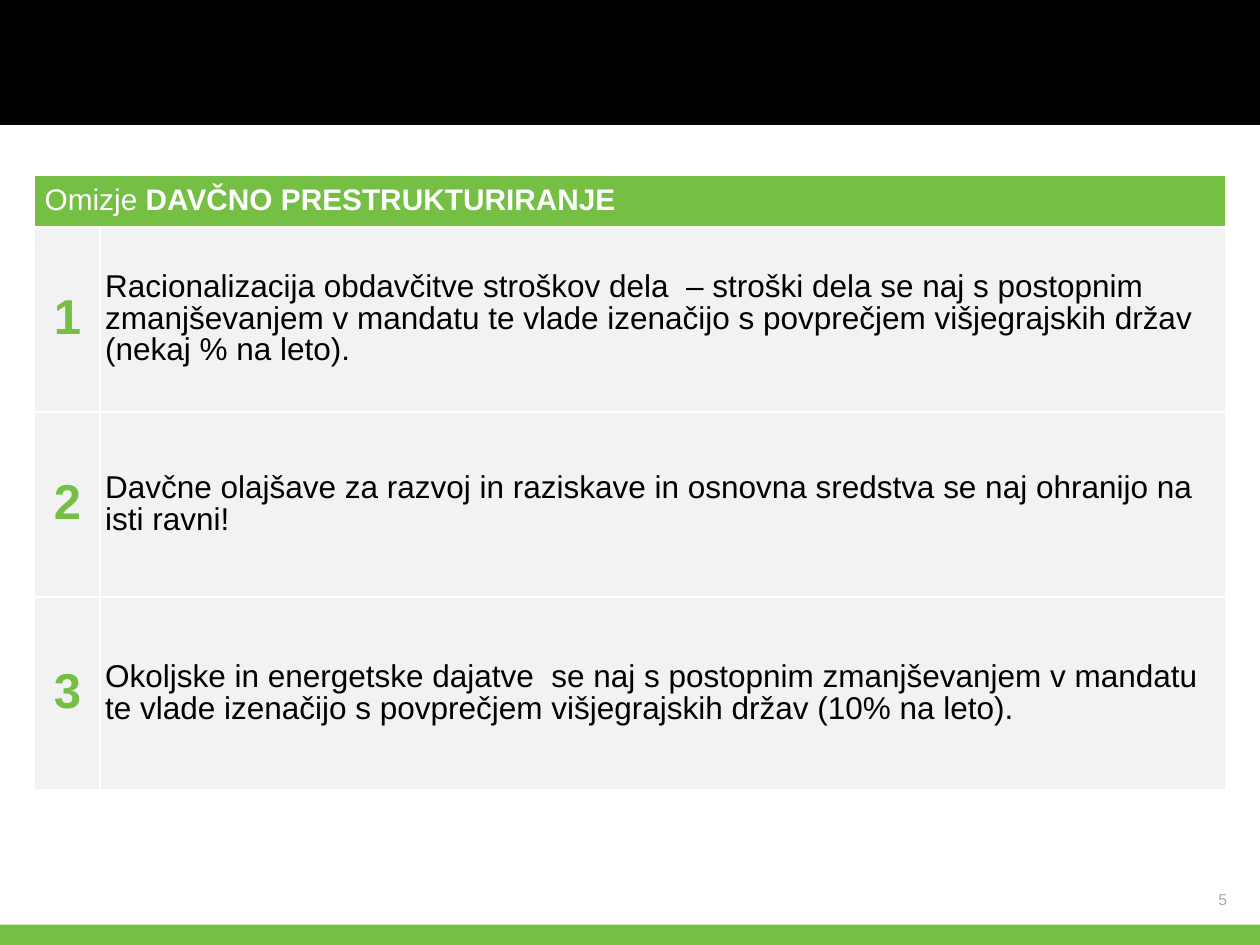
from lxml.etree import SubElement
from pptx import Presentation
from pptx.dml.color import RGBColor
from pptx.enum.shapes import MSO_SHAPE
from pptx.enum.text import MSO_ANCHOR, PP_ALIGN
from pptx.oxml.ns import qn
from pptx.util import Cm, Pt

GREEN, BLACK, WHITE = "74BF44", "000000", "FFFFFF"
LIGHT, GREY = "F2F2F2", "ADABA1"
TITLE = ("Omizje ", "DAVČNO PRESTRUKTURIRANJE")
MEASURES = [
    "Racionalizacija obdavčitve stroškov dela  – stroški dela se naj s postopnim "
    "zmanjševanjem v mandatu te vlade izenačijo s povprečjem višjegrajskih držav "
    "(nekaj % na leto).",
    "Davčne olajšave za razvoj in raziskave in osnovna sredstva se naj ohranijo "
    "na isti ravni!",
    "Okoljske in energetske dajatve  se naj s postopnim zmanjševanjem v mandatu "
    "te vlade izenačijo s povprečjem višjegrajskih držav (10% na leto).",
]


def rgb(color):
    return RGBColor.from_string(color)


def format_run(r, size, color, bold=False):
    r.font.name = "Arial"
    r.font.size = Pt(size)
    r.font.bold = bold
    r.font.color.rgb = rgb(color)


def add_band(s, top, height, color):
    sp = s.shapes.add_shape(MSO_SHAPE.RECTANGLE, 0, Cm(top), Cm(25.4), Cm(height))
    sp.shadow.inherit = False
    sp.fill.solid()
    sp.fill.fore_color.rgb = rgb(color)
    sp.line.fill.background()


def add_page_number(s, number):
    tf = s.shapes.add_textbox(Cm(24), Cm(17.96), Cm(0.74), Cm(0.36)).text_frame
    tf.margin_left = tf.margin_right = tf.margin_top = tf.margin_bottom = 0
    tf.vertical_anchor = MSO_ANCHOR.BOTTOM
    tf.word_wrap = True
    p = tf.paragraphs[0]
    p.text = number
    p.alignment = PP_ALIGN.RIGHT
    format_run(p.runs[0], 9, GREY)


def style_cell(cell, fill, margin):
    tcPr = cell._tc.get_or_add_tcPr()
    for side in ("a:lnL", "a:lnR", "a:lnT", "a:lnB"):
        ln = SubElement(tcPr, qn(side), w=str(Pt(1)))
        SubElement(SubElement(ln, qn("a:solidFill")), qn("a:srgbClr"), val=WHITE)
    cell.fill.solid()
    cell.fill.fore_color.rgb = rgb(fill)
    cell.vertical_anchor = MSO_ANCHOR.MIDDLE
    cell.margin_left = cell.margin_right = Cm(margin)
    cell.margin_top = cell.margin_bottom = Cm(margin)


def fill_cell(cell, text, size, color, bold=False, align=PP_ALIGN.LEFT):
    style_cell(cell, LIGHT, 0.1)
    p = cell.text_frame.paragraphs[0]
    p.text = text
    p.alignment = align
    p.line_spacing = 0.9
    format_run(p.runs[0], size, color, bold)


def fill_header(table):
    for cell in table.rows[0].cells:
        style_cell(cell, GREEN, 0.2)
    table.cell(0, 0).merge(table.cell(0, 1))
    p = table.cell(0, 0).text_frame.paragraphs[0]
    p.line_spacing = 0.9
    for text, bold in zip(TITLE, (False, True)):
        r = p.add_run()
        r.text = text
        format_run(r, 17, WHITE, bold)


def add_measures_table(s):
    widths, heights = (1.32, 22.68), (1.04, 3.73, 3.73, 3.89)
    table = s.shapes.add_table(len(heights), len(widths), Cm(0.7), Cm(3.53),
                               Cm(sum(widths)), Cm(sum(heights))).table
    table.first_row = table.horz_banding = False
    for column, width in zip(table.columns, widths):
        column.width = Cm(width)
    for row, height in zip(table.rows, heights):
        row.height = Cm(height)
    fill_header(table)
    for i, measure in enumerate(MEASURES, 1):
        fill_cell(table.cell(i, 0), str(i), 28, GREEN, True, PP_ALIGN.CENTER)
        fill_cell(table.cell(i, 1), measure, 18, BLACK)


def main():
    prs = Presentation()
    prs.slide_width, prs.slide_height = Cm(25.4), Cm(19.05)
    s = prs.slides.add_slide(prs.slide_layouts[6])
    add_band(s, 18.64, 0.41, GREEN)
    add_band(s, 0, 2.52, BLACK)
    add_page_number(s, "5")
    add_measures_table(s)
    prs.save("out.pptx")


if __name__ == "__main__":
    main()
